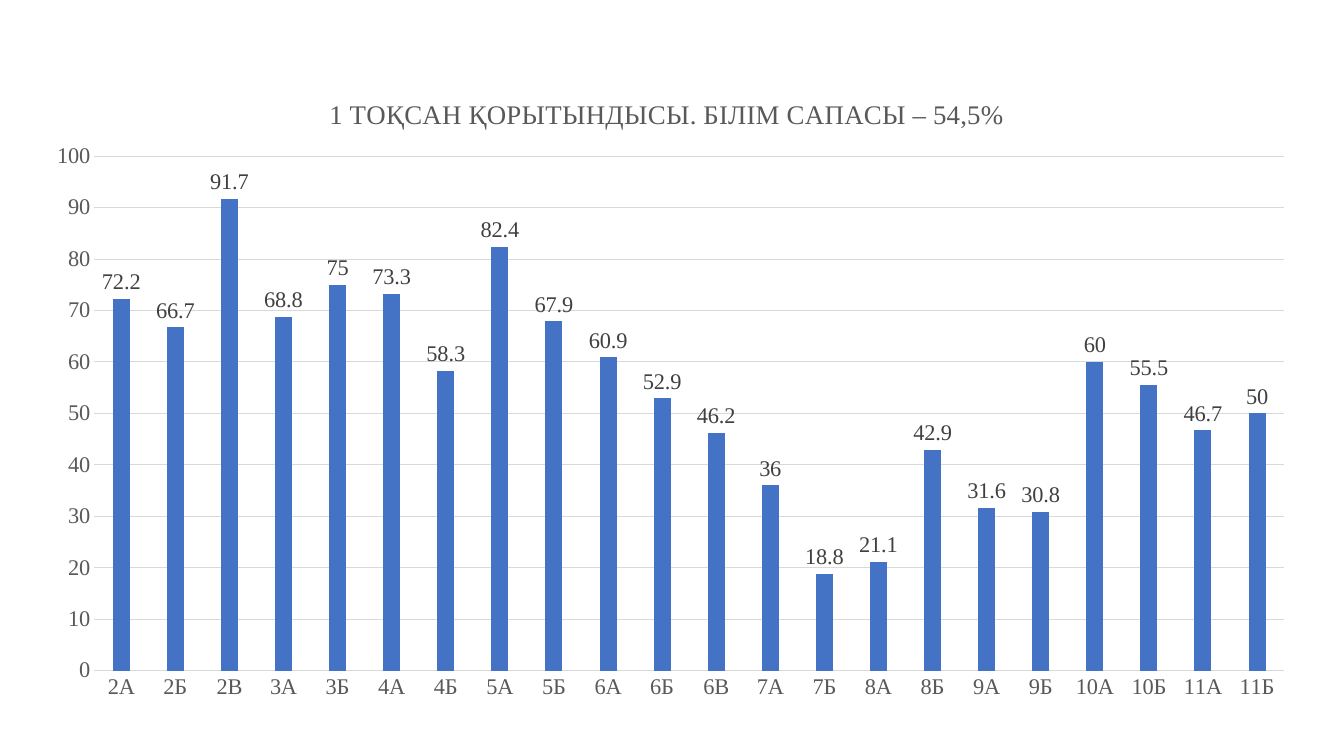
from lxml import etree
from pptx import Presentation
from pptx.chart.data import CategoryChartData
from pptx.dml.color import RGBColor
from pptx.enum.chart import XL_CHART_TYPE, XL_LABEL_POSITION, XL_TICK_MARK
from pptx.oxml.ns import qn
from pptx.util import Inches, Pt

COLORS = {"bar": "4472C4", "grid": "D9D9D9", "axis": "595959", "label": "404040"}
FONT = "Times New Roman"
QUALITY = {
    "2А": 72.2, "2Б": 66.7, "2В": 91.7, "3А": 68.8, "3Б": 75, "4А": 73.3,
    "4Б": 58.3, "5А": 82.4, "5Б": 67.9, "6А": 60.9, "6Б": 52.9, "6В": 46.2,
    "7А": 36, "7Б": 18.8, "8А": 21.1, "8Б": 42.9, "9А": 31.6, "9Б": 30.8,
    "10А": 60, "10Б": 55.5, "11А": 46.7, "11Б": 50,
}


def write(target, text=None, size=16, color="axis"):
    """Put text, if given, into a text frame and format the target's font."""
    if text is not None:
        target.text = text
        target = target.paragraphs[0].runs[0]
    target.font.name = FONT
    target.font.size = Pt(size)
    target.font.bold = False
    target.font.color.rgb = RGBColor.from_string(COLORS[color])


def place(parent, index, **settings):
    """Give a chart part a manual layout as fractions of the chart."""
    for old in parent.findall(qn("c:layout")):
        parent.remove(old)
    layout = etree.Element(qn("c:layout"))
    manual = etree.SubElement(layout, qn("c:manualLayout"))
    for key, value in settings.items():
        etree.SubElement(manual, qn(f"c:{key}")).set("val", str(value))
    parent.insert(index, layout)


prs = Presentation()
prs.slide_width = Inches(13.33)
prs.slide_height = Inches(7.5)
slide = prs.slides.add_slide(prs.slide_layouts[6])

quality_data = CategoryChartData()
quality_data.categories = list(QUALITY)
quality_data.add_series("Series 1", list(QUALITY.values()))
chart = slide.shapes.add_chart(
    XL_CHART_TYPE.COLUMN_CLUSTERED,
    Inches(0.3), Inches(0.72), Inches(12.69), Inches(6.38), quality_data,
).chart
chart.font.name = FONT
chart.font.size = Pt(16)
chart.has_legend = False

chart.has_title = True
write(chart.chart_title.text_frame,
      "1 ТОҚСАН ҚОРЫТЫНДЫСЫ. БІЛІМ САПАСЫ – 54,5%", size=19.2)
chart.chart_title.include_in_layout = False
place(chart.chart_title._element, 1, xMode="edge", yMode="edge", x=0.23, y=0.03)

classes, percent = chart.category_axis, chart.value_axis
for axis in (classes, percent):
    axis.major_tick_mark = XL_TICK_MARK.NONE
    axis.minor_tick_mark = XL_TICK_MARK.NONE
    write(axis.tick_labels)
percent.minimum_scale = 0
percent.maximum_scale = 100
percent.major_unit = 10
percent.has_major_gridlines = True
percent.format.line.fill.background()
for line in (classes.format.line, percent.major_gridlines.format.line):
    line.color.rgb = RGBColor.from_string(COLORS["grid"])
    line.width = Pt(0.75)

plot = chart.plots[0]
plot.gap_width = 219
plot.overlap = -27
plot.vary_by_categories = False
place(plot._element.getparent(), 0, layoutTarget="inner", xMode="edge",
      yMode="edge", x=0.05, y=0.13, w=0.93, h=0.8)

bars = plot.series[0]
bars.format.fill.solid()
bars.format.fill.fore_color.rgb = RGBColor.from_string(COLORS["bar"])
bars.invert_if_negative = False
labels = bars.data_labels
labels.show_value = True
labels.position = XL_LABEL_POSITION.OUTSIDE_END
write(labels, color="label")

prs.save("out.pptx")
